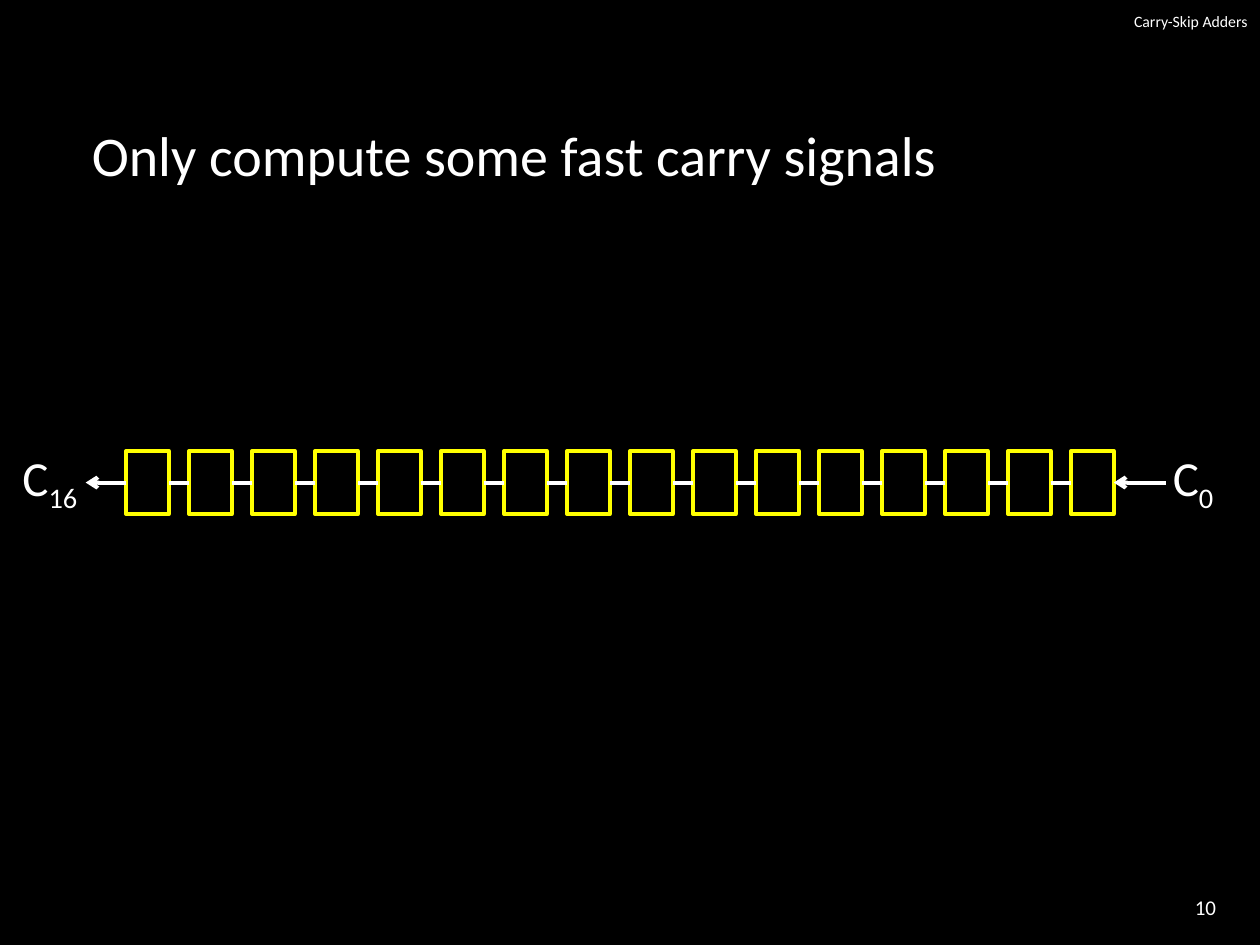
from lxml.etree import SubElement
from pptx import Presentation
from pptx.dml.color import RGBColor
from pptx.enum.shapes import MSO_CONNECTOR, MSO_SHAPE
from pptx.enum.text import MSO_ANCHOR, PP_ALIGN
from pptx.oxml.ns import qn
from pptx.util import Inches, Pt

THEME = {
    "font": "Calibri",
    "background": RGBColor(0, 0, 0),
    "text": RGBColor(255, 255, 255),
    "cell": RGBColor(255, 255, 0),
    "header_size": Pt(9),
    "number_size": Pt(12),
    "signal_size": Pt(28),
    "statement_size": Pt(32),
    "line_width": Pt(2.25),
}


def write_text(shape, text, size, subscript="", align=PP_ALIGN.LEFT,
               anchor=MSO_ANCHOR.TOP, wrap=True):
    frame = shape.text_frame
    frame.word_wrap = wrap
    frame.vertical_anchor = anchor
    paragraph = frame.paragraphs[0]
    paragraph.alignment = align
    paragraph.font.name = THEME["font"]
    paragraph.font.size = size
    paragraph.font.color.rgb = THEME["text"]
    paragraph.add_run().text = text
    if subscript:
        run = paragraph.add_run()
        run.text = subscript
        run._r.get_or_add_rPr().set("baseline", "-25000")


def add_carry(shapes, start, end, arrow=False):
    """Draw a carry wire from one (x, y) point to another."""
    wire = shapes.add_connector(MSO_CONNECTOR.STRAIGHT, *start, *end)
    wire.line.color.rgb = THEME["text"]
    wire.line.width = THEME["line_width"]
    if arrow:
        SubElement(wire.line._get_or_add_ln(), qn("a:tailEnd"), type="arrow")
    SubElement(wire._element.spPr, qn("a:effectLst"))
    return wire


presentation = Presentation()
presentation.slide_width = Inches(10)
presentation.slide_height = Inches(7.5)
slide = presentation.slides.add_slide(presentation.slide_layouts[5])
slide.background.fill.solid()
slide.background.fill.fore_color.rgb = THEME["background"]
shapes = slide.shapes

# Header, statement and slide number
title = shapes.title
title.left, title.top = Inches(6.17), 0
title.width, title.height = Inches(3.83), Inches(0.33)
write_text(title, "Carry-Skip Adders", THEME["header_size"],
           align=PP_ALIGN.RIGHT, anchor=MSO_ANCHOR.MIDDLE)

statement = shapes.add_textbox(Inches(0.63), Inches(0.91), Inches(9.12), Inches(0.84))
write_text(statement, "Only compute some fast carry signals", THEME["statement_size"])

number = shapes.add_textbox(Inches(8.92), Inches(7), Inches(0.83), Inches(0.4))
write_text(number, "10", THEME["number_size"],
           align=PP_ALIGN.RIGHT, anchor=MSO_ANCHOR.MIDDLE)

# Row of adder cells, one per bit
CELL_COUNT = 16
PITCH = Inches(0.5)
ROW_LEFT, ROW_TOP = Inches(1), Inches(3.58)
CELL_WIDTH, CELL_HEIGHT = Inches(0.34), Inches(0.5)
wire_y = ROW_TOP + CELL_HEIGHT // 2

cells = []
for column in range(CELL_COUNT):
    cell = shapes.add_shape(MSO_SHAPE.RECTANGLE, ROW_LEFT + column * PITCH, ROW_TOP,
                            CELL_WIDTH, CELL_HEIGHT)
    cell.shadow.inherit = False
    cell.fill.background()
    cell.line.color.rgb = THEME["cell"]
    cell.line.width = THEME["line_width"]
    cells.append(cell)

# Carries ripple from right to left
for target, source in zip(cells, cells[1:]):
    wire = add_carry(shapes, (source.left, wire_y), (target.left + CELL_WIDTH, wire_y))
    wire.begin_connect(source, 1)
    wire.end_connect(target, 3)

carry_in = add_carry(shapes, (Inches(9.25), wire_y),
                     (cells[-1].left + CELL_WIDTH, wire_y), arrow=True)
carry_in.end_connect(cells[-1], 3)
carry_out = add_carry(shapes, (ROW_LEFT, wire_y), (Inches(0.68), wire_y), arrow=True)
carry_out.begin_connect(cells[0], 1)

for index, left, width in (("16", 0.08, 0.68), ("0", 9.21, 0.54)):
    label = shapes.add_textbox(Inches(left), Inches(3.5), Inches(width), Inches(0.57))
    write_text(label, "C", THEME["signal_size"], subscript=index, wrap=False)

presentation.save("out.pptx")
